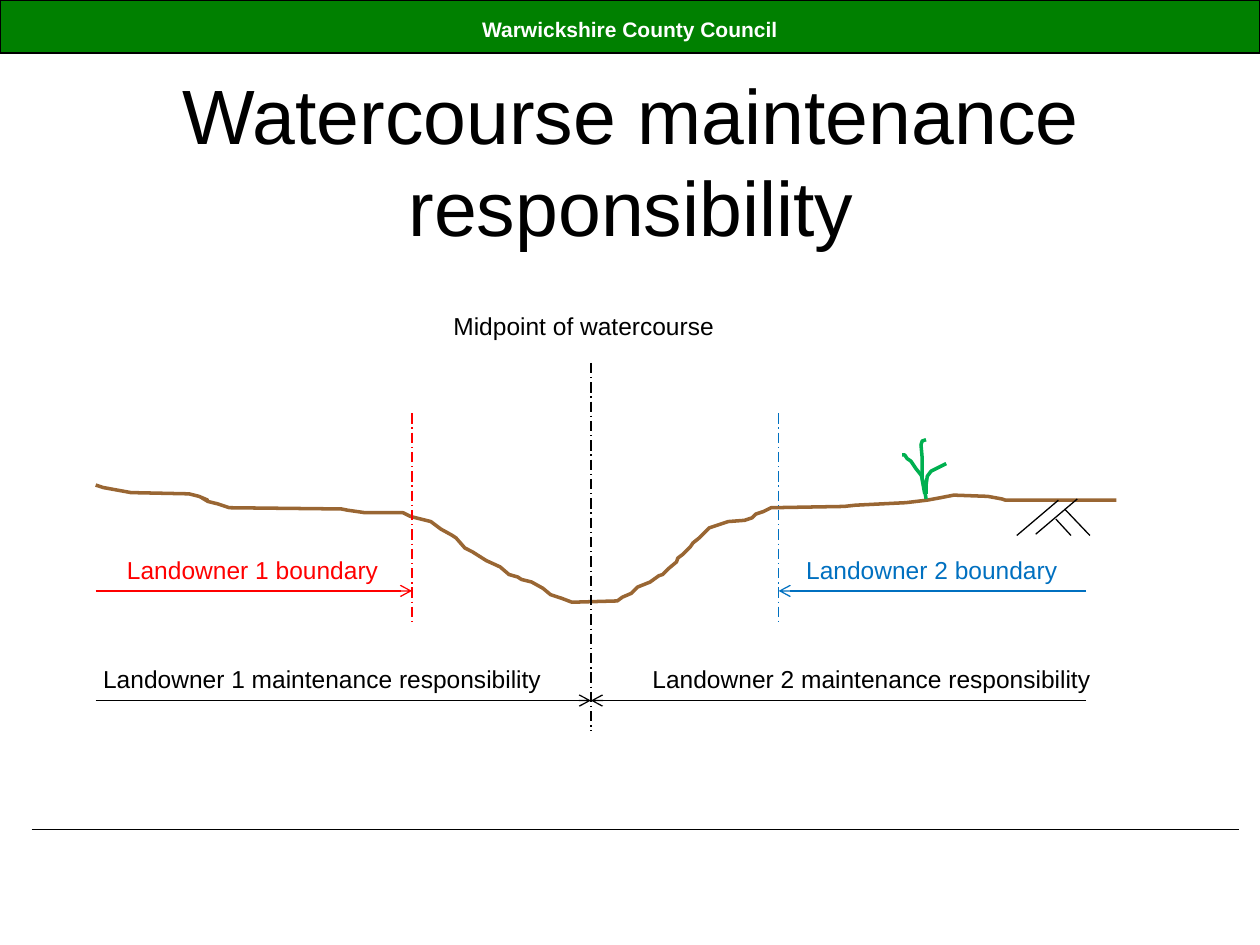
from dataclasses import dataclass

from lxml.etree import SubElement
from pptx import Presentation
from pptx.dml.color import RGBColor
from pptx.enum.dml import MSO_LINE
from pptx.enum.shapes import MSO_CONNECTOR, MSO_SHAPE
from pptx.enum.text import MSO_ANCHOR, PP_ALIGN
from pptx.oxml.ns import qn
from pptx.util import Inches, Pt


@dataclass(frozen=True)
class Theme:
    font: str = "Arial"
    black: str = "000000"
    white: str = "FFFFFF"
    banner: str = "008000"
    soil: str = "996633"
    plant: str = "00B050"
    owner1: str = "FF0000"
    owner2: str = "0070C0"
    title: int = 44
    label: int = 14
    header: int = 12
    thin: float = 0.75
    thick: float = 2


T = Theme()

prs = Presentation()
prs.slide_width, prs.slide_height = Inches(10), Inches(7.5)
s = prs.slides.add_slide(prs.slide_layouts[6])


def add_text(text, x, y, w, h, size=T.label, color=T.black, bold=False,
             align=PP_ALIGN.LEFT, anchor=MSO_ANCHOR.TOP):
    tf = s.shapes.add_textbox(Inches(x), Inches(y), Inches(w), Inches(h)).text_frame
    tf.word_wrap = True
    tf.vertical_anchor = anchor
    p = tf.paragraphs[0]
    p.alignment = align
    r = p.add_run()
    r.text = text
    r.font.name, r.font.size, r.font.bold = T.font, Pt(size), bold
    r.font.color.rgb = RGBColor.from_string(color)


def add_line(x1, y1, x2, y2, color=T.black, width=T.thin, dashed=False, arrow=False):
    cx = s.shapes.add_connector(MSO_CONNECTOR.STRAIGHT, Inches(x1), Inches(y1),
                                Inches(x2), Inches(y2))
    cx.line.color.rgb = RGBColor.from_string(color)
    cx.line.width = Pt(width)
    if dashed:
        cx.line.dash_style = MSO_LINE.LONG_DASH_DOT
    if arrow:
        SubElement(cx.line._get_or_add_ln(), qn("a:tailEnd"), type="arrow")
    SubElement(cx._element.spPr, qn("a:effectLst"))


# Banner, footer rule and title
sp = s.shapes.add_shape(MSO_SHAPE.RECTANGLE, 0, 0, prs.slide_width, Inches(0.42))
sp.shadow.inherit = False
sp.fill.solid()
sp.fill.fore_color.rgb = RGBColor.from_string(T.banner)
sp.line.color.rgb = RGBColor.from_string(T.black)
sp.line.width = Pt(T.thin)
add_text("Warwickshire County Council", 0, 0.08, 10, 0.3, size=T.header,
         color=T.white, bold=True, align=PP_ALIGN.CENTER)
add_line(0.25, 6.58, 9.83, 6.58, width=0.5)
add_text("Watercourse maintenance responsibility", 0.51, 0.52, 9, 1.5,
         size=T.title, align=PP_ALIGN.CENTER, anchor=MSO_ANCHOR.MIDDLE)

# Ground profile and plant, in hundredths of an inch
ground = [
    (76, 385), (82, 387), (93, 389), (104, 391), (150, 392), (158, 394), (165, 397),
    (160, 395), (165, 398), (173, 400), (182, 403), (271, 404), (276, 405), (290, 407),
    (320, 407), (326, 410), (342, 414), (350, 420), (359, 425), (362, 427), (369, 435),
    (375, 438), (386, 445), (397, 450), (404, 456), (411, 458), (414, 460), (422, 462),
    (431, 467), (437, 472), (446, 475), (454, 478), (490, 477), (494, 474), (501, 471),
    (506, 466), (516, 462), (523, 457), (526, 456), (531, 451), (537, 446), (538, 443),
    (542, 440), (548, 434), (550, 431), (555, 427), (560, 422), (563, 419), (569, 417),
    (578, 414), (591, 413), (597, 411), (600, 408), (606, 406), (612, 403), (670, 402),
    (679, 401), (719, 399), (736, 397), (747, 395), (757, 393), (784, 394), (795, 396),
    (798, 397), (886, 397),
]
left_leaf = [(735, 396), (734, 390), (733, 383), (731, 377), (727, 372), (723, 366),
             (720, 364), (718, 361), (716, 361)]
right_leaf = [(735, 392), (735, 385), (736, 378), (739, 374), (745, 371), (751, 368)]
stem = [(734, 392), (732, 381), (732, 364), (731, 353), (732, 350), (735, 349)]

for outline, color in ((ground, T.soil), (left_leaf, T.plant),
                       (right_leaf, T.plant), (stem, T.plant)):
    fb = s.shapes.build_freeform(*outline[0], scale=Inches(0.01))
    fb.add_line_segments(outline[1:], close=False)
    sp = fb.convert_to_shape()
    sp.shadow.inherit = False
    sp.fill.background()
    sp.line.color.rgb = RGBColor.from_string(color)
    sp.line.width = Pt(T.thick)

# Landowners: outer edge, boundary, label positions
midpoint = 4.69
for name, color, edge, boundary, boundary_x, duty_x in (
        ("Landowner 1", T.owner1, 0.76, 3.27, 0.91, 0.72),
        ("Landowner 2", T.owner2, 8.62, 6.18, 6.3, 5.08)):
    add_line(boundary, 3.28, boundary, 4.93, color=color, dashed=True)
    add_line(edge, 4.69, boundary, 4.69, color=color, arrow=True)
    add_text(f"{name} boundary", boundary_x, 4.36, 2.3, 0.34, color=color)
    add_line(edge, 5.56, midpoint, 5.56, arrow=True)
    add_text(f"{name} maintenance responsibility", duty_x, 5.22, 3.94, 0.34)

# Midpoint of the watercourse
add_line(midpoint, 2.88, midpoint, 5.8, dashed=True)
add_text("Midpoint of watercourse", 3.5, 2.42, 2.36, 0.34)

# Ground hatching
for hatch in ((8.22, 4.24, 8.55, 3.96), (8.07, 4.25, 8.4, 3.97),
              (8.45, 4.04, 8.65, 4.25), (8.38, 4.12, 8.5, 4.25)):
    add_line(*hatch)

prs.save("out.pptx")
